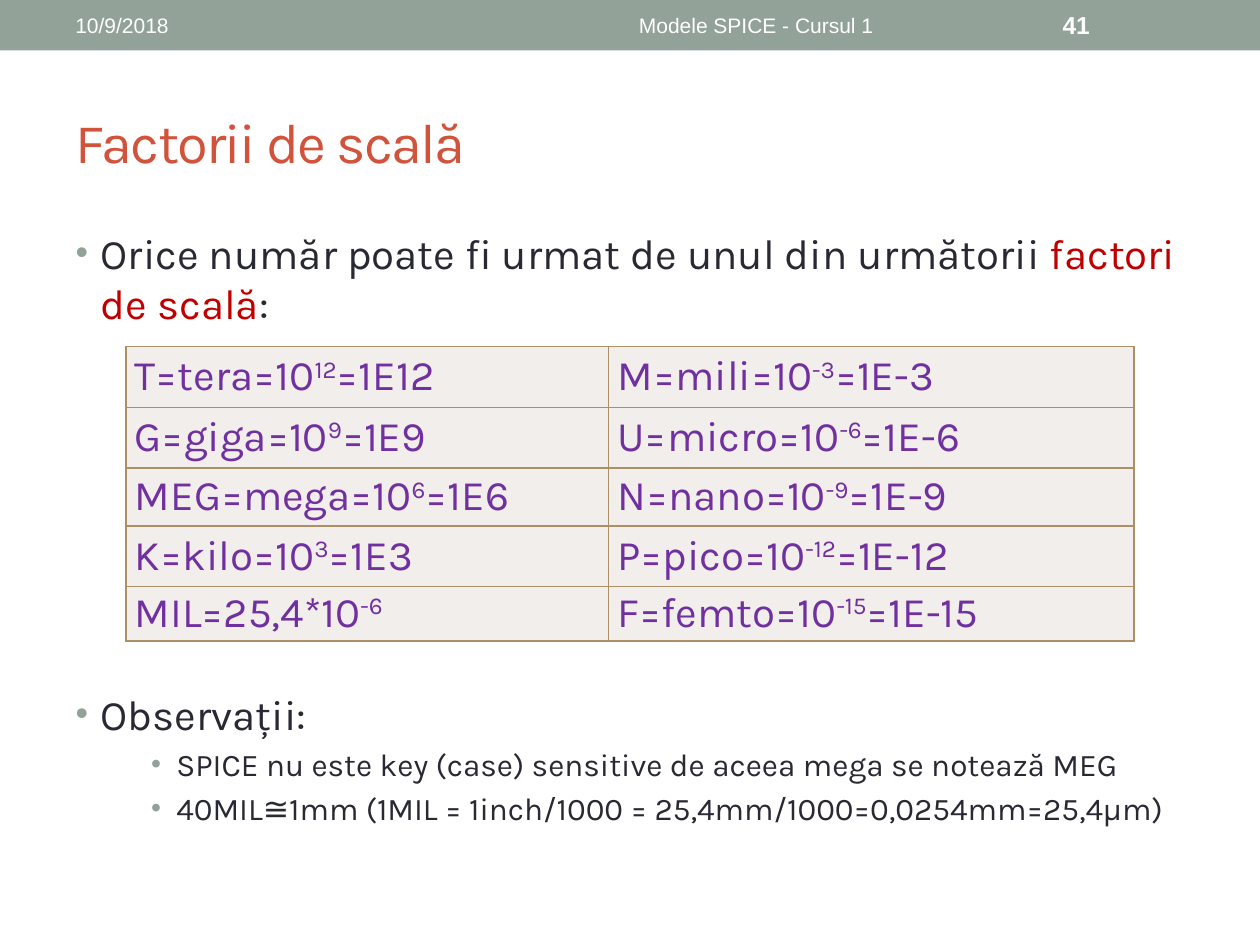
from lxml import etree
from pptx import Presentation
from pptx.dml.color import RGBColor
from pptx.enum import shapes, text
from pptx.oxml.ns import qn
from pptx.util import Cm, Pt


def tint(code):
    """Turn a hex string into a colour."""
    return RGBColor.from_string(code)


def add_run(para, words, size, color, face="Karla", bold=False):
    run = para.add_run()
    run.text = words
    font = run.font
    font.size, font.name, font.bold = Pt(size), face, bold
    font.color.rgb = tint(color)
    return run


SAGE, DARK, RED, WHITE = "93A299", "292934", "C00000", "FFFFFF"
LEFT, MID = text.PP_ALIGN.LEFT, text.MSO_ANCHOR.MIDDLE

deck = Presentation()
deck.slide_width, deck.slide_height = Cm(25.4), Cm(19.05)
slide = deck.slides.add_slide(deck.slide_layouts[1])
title, body = slide.placeholders

# Header band
band = slide.shapes.add_shape(
    shapes.MSO_SHAPE.RECTANGLE, 0, 0, deck.slide_width, Cm(1.02))
band.shadow.inherit = False
band.fill.solid()
band.fill.fore_color.rgb = tint(SAGE)
band.line.fill.background()

header = [
    ("10/9/2018", 1.27, 8.05, LEFT, 12, False),
    ("Modele SPICE - Cursul 1", 9.53, 11.43, text.PP_ALIGN.CENTER, 12, False),
    ("41", 21.17, 2.96, LEFT, 14, True),
]
for words, left, width, align, size, bold in header:
    frame = slide.shapes.add_textbox(Cm(left), Cm(0.05), Cm(width), Cm(0.91)).text_frame
    frame.word_wrap = True
    frame.vertical_anchor = MID
    para = frame.paragraphs[0]
    para.alignment = align
    add_run(para, words, size, WHITE, "Arial", bold)

# Title
title.left, title.top, title.width, title.height = Cm(1.27), Cm(1.47), Cm(22.86), Cm(2.74)
frame = title.text_frame
frame.auto_size = text.MSO_AUTO_SIZE.NONE
frame.vertical_anchor = MID
frame.paragraphs[0].alignment = LEFT
run = add_run(frame.paragraphs[0], "Factorii de scală", 32, "D2533C")
run.font._element.set("spc", "-100")

# Bullet list; the second item leaves room for the table
body.left, body.top, body.width, body.height = Cm(1.27), Cm(4.45), Cm(22.86), Cm(12.9)
frame = body.text_frame
frame.auto_size = text.MSO_AUTO_SIZE.NONE
frame.vertical_anchor = text.MSO_ANCHOR.TOP
items = [
    (0, 0, 24, [("Orice număr poate fi urmat de unul din următorii ", DARK),
                ("factori de scală", RED), (":", DARK)]),
    (0, 206, 24, [("Observații:", DARK)]),
    (2, 3.6, 18, [("SPICE nu este key (case) sensitive de aceea mega se notează MEG", DARK)]),
    (2, 3.6, 18, [("40MIL≅1mm (1MIL = 1inch/1000 = 25,4mm/1000=0,0254mm=25,4µm)", DARK)]),
]
for i, (level, gap, size, parts) in enumerate(items):
    para = frame.add_paragraph() if i else frame.paragraphs[0]
    para.level = level
    para.alignment = LEFT
    para.space_before = Pt(gap)
    props = para._p.get_or_add_pPr()
    props.set("marL", str(Cm(2.03 if level else 0.51)))
    props.set("indent", str(-Cm(0.51)))
    shade = etree.SubElement(props, qn("a:buClr"))
    etree.SubElement(shade, qn("a:srgbClr"), val=SAGE)
    etree.SubElement(props, qn("a:buSzPct"), val="90000" if level else "85000")
    etree.SubElement(props, qn("a:buFont"), typeface="Arial")
    etree.SubElement(props, qn("a:buChar"), char="•")
    for words, color in parts:
        add_run(para, words, size, color)

# Table of scale factors; carets enclose exponents
rows = [
    ("T=tera=10^12^=1E12", "M=mili=10^-3^=1E-3"),
    ("G=giga=10^9^=1E9", "U=micro=10^-6^=1E-6"),
    ("MEG=mega=10^6^=1E6", "N=nano=10^-9^=1E-9"),
    ("K=kilo=10^3^=1E3", "P=pico=10^-12^=1E-12"),
    ("MIL=25,4*10^-6", "F=femto=10^-15^=1E-15"),
]
table = slide.shapes.add_table(
    len(rows), 2, Cm(2.54), Cm(6.99), Cm(20.32), Cm(5.93)).table
table.first_row = table.horz_banding = False
for col, width in zip(table.columns, (9.73, 10.59)):
    col.width = Cm(width)
for row, height, cells in zip(table.rows, (1.22, 1.22, 1.17, 1.22, 1.1), rows):
    row.height = Cm(height)
    for cell, words in zip(row.cells, cells):
        cell.margin_left = cell.margin_right = Cm(0.18)
        cell.margin_top = cell.margin_bottom = 0
        cell.vertical_anchor = MID
        for side in ("lnL", "lnR", "lnT", "lnB"):
            edge = etree.SubElement(
                cell._tc.get_or_add_tcPr(), qn("a:" + side), w=str(Pt(1)))
            paint = etree.SubElement(edge, qn("a:solidFill"))
            etree.SubElement(paint, qn("a:srgbClr"), val="AD8F67")
        cell.fill.solid()
        cell.fill.fore_color.rgb = tint("F1EEEB")
        para = cell.text_frame.paragraphs[0]
        para.alignment = text.PP_ALIGN.JUSTIFY
        for i, part in enumerate(words.split("^")):
            run = add_run(para, part, 24, "7030A0")
            if i == 1:
                run.font._element.set("baseline", "30000")

deck.save("out.pptx")
